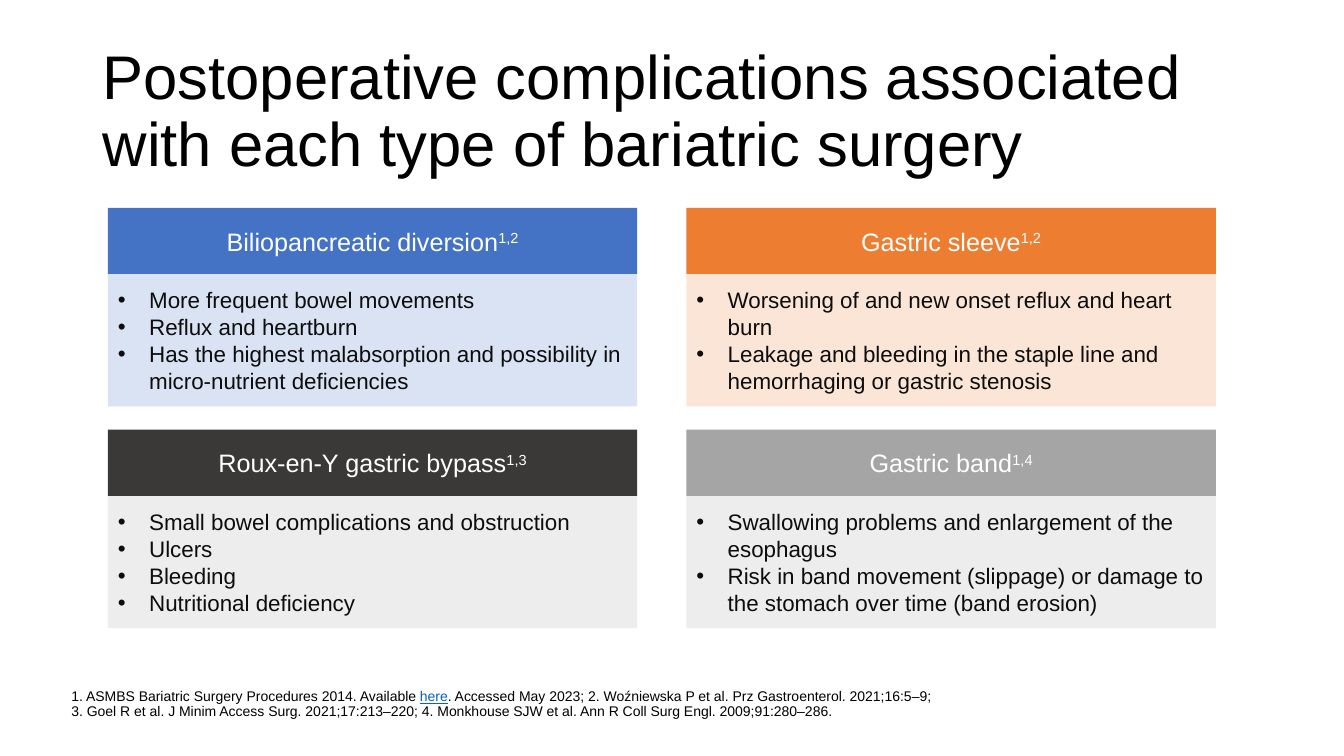
from dataclasses import dataclass

from lxml import etree
from pptx import Presentation
from pptx.dml.color import RGBColor
from pptx.enum import shapes, text as t
from pptx.oxml import ns
from pptx.util import Cm, Pt

FONT = "Arial"
COLORS = {
    "black": "000000", "body": "0D0D0D", "white": "FFFFFF", "link": "0563C1",
    "blue": "4472C4", "pale blue": "DAE3F3",
    "orange": "ED7D31", "pale orange": "FBE5D6",
    "charcoal": "3B3838", "gray": "A5A5A5", "pale gray": "EDEDED",
}

# Panel grid, in centimetres
GRID_LEFT, GRID_TOP = 2.72, 5.24
COLUMN_STEP, ROW_STEP = 14.58, 5.59
PANEL_WIDTH, HEADER_HEIGHT, BODY_HEIGHT = 13.34, 1.67, 3.33
BULLET_INDENT = 0.79


@dataclass(frozen=True)
class Panel:
    column: int
    row: int
    heading: str
    references: str
    header_fill: str
    body_fill: str
    complications: tuple[str, ...]


PANELS = (
    Panel(0, 0, "Biliopancreatic diversion", "1,2", "blue", "pale blue", (
        "More frequent bowel movements",
        "Reflux and heartburn",
        "Has the highest malabsorption and possibility in micro-nutrient deficiencies",
    )),
    Panel(0, 1, "Roux-en-Y gastric bypass", "1,3", "charcoal", "pale gray", (
        "Small bowel complications and obstruction",
        "Ulcers",
        "Bleeding",
        "Nutritional deficiency",
    )),
    Panel(1, 0, "Gastric sleeve", "1,2", "orange", "pale orange", (
        "Worsening of and new onset reflux and heart burn",
        "Leakage and bleeding in the staple line and hemorrhaging or gastric stenosis",
    )),
    Panel(1, 1, "Gastric band", "1,4", "gray", "pale gray", (
        "Swallowing problems and enlargement of the esophagus",
        "Risk in band movement (slippage) or damage to the stomach over time (band erosion)",
    )),
)


def add_text(paragraph, content: str, *, size: float, color: str = "black",
             underline: bool = False, superscript: bool = False) -> None:
    run = paragraph.add_run()
    run.text = content
    run.font.name = FONT
    run.font.size = Pt(size)
    run.font.color.rgb = RGBColor.from_string(COLORS[color])
    if underline:
        run.font.underline = True
    if superscript:
        run._r.get_or_add_rPr().set("baseline", "30000")


def add_bullet(paragraph) -> None:
    properties = paragraph._p.get_or_add_pPr()
    properties.set("marL", str(Cm(BULLET_INDENT)))
    properties.set("indent", str(-Cm(BULLET_INDENT)))
    etree.SubElement(properties, ns.qn("a:buFont")).set("typeface", FONT)
    etree.SubElement(properties, ns.qn("a:buChar")).set("char", "•")


def add_box(slide, left: float, top: float, height: float, fill: str):
    box = slide.shapes.add_shape(shapes.MSO_SHAPE.RECTANGLE, Cm(left), Cm(top),
                                 Cm(PANEL_WIDTH), Cm(height))
    box.shadow.inherit = False
    box.fill.solid()
    box.fill.fore_color.rgb = RGBColor.from_string(COLORS[fill])
    box.line.fill.background()
    box.text_frame.word_wrap = True
    box.text_frame.vertical_anchor = t.MSO_ANCHOR.MIDDLE
    return box.text_frame


def add_panel(slide, panel: Panel) -> None:
    left = GRID_LEFT + panel.column * COLUMN_STEP
    top = GRID_TOP + panel.row * ROW_STEP

    header = add_box(slide, left, top, HEADER_HEIGHT, panel.header_fill).paragraphs[0]
    header.alignment = t.PP_ALIGN.CENTER
    add_text(header, panel.heading, size=18, color="white")
    add_text(header, panel.references, size=18, color="white", superscript=True)

    body = add_box(slide, left, top + HEADER_HEIGHT, BODY_HEIGHT, panel.body_fill)
    for index, complication in enumerate(panel.complications):
        paragraph = body.add_paragraph() if index else body.paragraphs[0]
        paragraph.alignment = t.PP_ALIGN.LEFT
        add_bullet(paragraph)
        add_text(paragraph, complication, size=16, color="body")


def add_title(slide) -> None:
    title = slide.shapes.title
    title.left, title.top = Cm(2.33), Cm(1.01)
    title.width, title.height = Cm(29.21), Cm(3.68)
    frame = title.text_frame
    frame.word_wrap = True
    frame.auto_size = t.MSO_AUTO_SIZE.NONE
    frame.vertical_anchor = t.MSO_ANCHOR.MIDDLE
    paragraph = frame.paragraphs[0]
    paragraph.alignment = t.PP_ALIGN.LEFT
    paragraph.line_spacing = 0.9
    add_text(paragraph, "Postoperative complications associated with each type of "
             "bariatric surgery", size=44)


def add_footnotes(slide) -> None:
    frame = slide.shapes.add_textbox(Cm(1.8), Cm(17.25), Cm(30.84), Cm(0.89)).text_frame
    frame.word_wrap = True
    frame.vertical_anchor = t.MSO_ANCHOR.BOTTOM
    frame.margin_left = frame.margin_right = frame.margin_top = frame.margin_bottom = 0
    paragraph = frame.paragraphs[0]
    paragraph.line_spacing = 0.9
    add_text(paragraph, "1. ASMBS Bariatric Surgery Procedures 2014. Available ", size=10)
    add_text(paragraph, "here", size=10, color="link", underline=True)
    add_text(paragraph, ". Accessed May 2023; 2. Woźniewska P et al. "
             "Prz Gastroenterol. 2021;16:5–9; ", size=10)
    paragraph.add_line_break()
    add_text(paragraph, "3. Goel R et al. J Minim Access Surg. 2021;17:213–220; "
             "4. Monkhouse SJW et al. Ann R Coll Surg Engl. 2009;91:280–286.", size=10)


def main() -> None:
    presentation = Presentation()
    presentation.slide_width, presentation.slide_height = Cm(33.87), Cm(19.05)
    slide = presentation.slides.add_slide(presentation.slide_layouts[5])
    add_title(slide)
    add_footnotes(slide)
    for panel in PANELS:
        add_panel(slide, panel)
    presentation.save("out.pptx")


if __name__ == "__main__":
    main()
